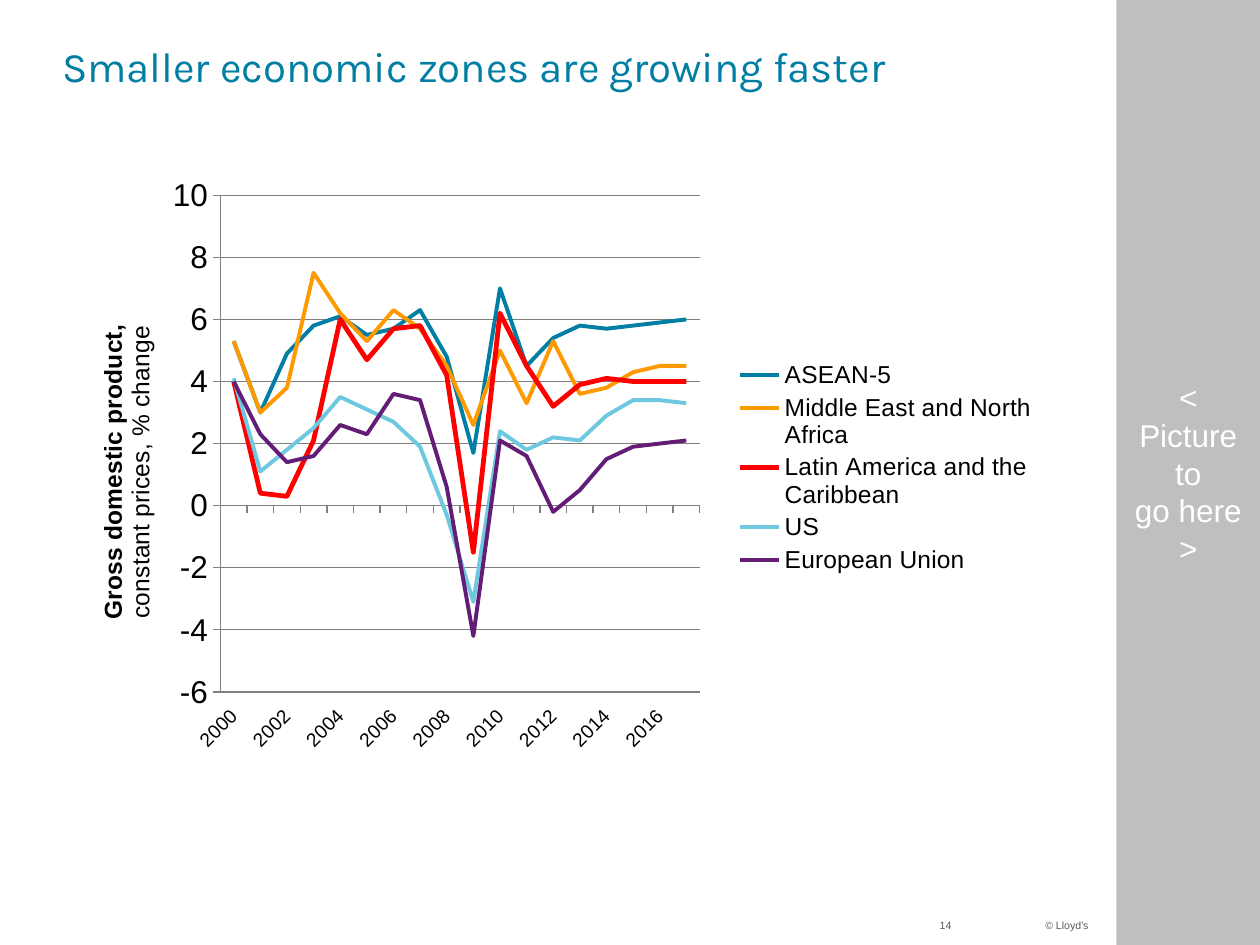
from lxml import etree
from pptx import Presentation
from pptx.chart.data import CategoryChartData
from pptx.dml.color import RGBColor
from pptx.enum.chart import XL_CHART_TYPE as ChartType, XL_LEGEND_POSITION as LegendPos
from pptx.enum.chart import XL_TICK_LABEL_POSITION as LabelPos, XL_TICK_MARK as TickMark
from pptx.enum.shapes import MSO_SHAPE as Preset
from pptx.enum.text import MSO_ANCHOR as Anchor, PP_ALIGN as Align
from pptx.oxml.ns import qn
from pptx.util import Pt

COLORS = {
    "title": "007EA3", "white": "FFFFFF", "sidebar": "BFBFBF", "footer": "595959",
    "text": "000000", "grid": "808080", "asean": "007EA3", "mena": "FF9900",
    "latin": "FF0000", "us": "6EC9E0", "eu": "631D76",
}
YEARS = [str(year) for year in range(2000, 2018)]
# name, colour, line width, growth per year
ZONES = [
    ("ASEAN-5", "asean", 2.25,
     [5.3, 3, 4.9, 5.8, 6.1, 5.5, 5.7, 6.3, 4.8, 1.7, 7, 4.5, 5.4, 5.8, 5.7, 5.8, 5.9, 6]),
    ("Middle East and North Africa", "mena", 2.25,
     [5.3, 3, 3.8, 7.5, 6.2, 5.3, 6.3, 5.7, 4.5, 2.6, 5, 3.3, 5.3, 3.6, 3.8, 4.3, 4.5, 4.5]),
    ("Latin America and the Caribbean", "latin", 2.75,
     [4, 0.4, 0.3, 2.1, 6, 4.7, 5.7, 5.8, 4.2, -1.5, 6.2, 4.5, 3.2, 3.9, 4.1, 4, 4, 4]),
    ("US", "us", 2.25,
     [4.1, 1.1, 1.8, 2.5, 3.5, 3.1, 2.7, 1.9, -0.3, -3.1, 2.4, 1.8, 2.2, 2.1, 2.9, 3.4, 3.4, 3.3]),
    ("European Union", "eu", 2.25,
     [4, 2.3, 1.4, 1.6, 2.6, 2.3, 3.6, 3.4, 0.6, -4.2, 2.1, 1.6, -0.2, 0.5, 1.5, 1.9, 2, 2.1]),
]


def rgb(key):
    return RGBColor.from_string(COLORS[key])


def style(font, size, color, face="Arial", bold=False):
    font.size, font.name, font.bold = Pt(size), face, bold
    font.color.rgb = rgb(color)


def add_run(paragraph, text, *args, **kwargs):
    run = paragraph.add_run()
    run.text = text
    style(run.font, *args, **kwargs)


def set_margins(frame, top=0):
    frame.margin_left = frame.margin_right = frame.margin_bottom = 0
    frame.margin_top = Pt(top)


def place_title(slide, left, top, width, height):
    title = slide.shapes.title
    title.left, title.top, title.width, title.height = map(Pt, (left, top, width, height))
    title.fill.solid()
    title.fill.fore_color.rgb = rgb("white")
    frame = title.text_frame
    set_margins(frame, top=3)
    frame.vertical_anchor = Anchor.TOP
    heading = frame.paragraphs[0]
    heading.alignment = Align.LEFT
    heading.line_spacing = 0.8
    add_run(heading, "Smaller economic zones are growing faster", 24, "title", face="Karla")


def add_sidebar(slide, left, top, width, height):
    sidebar = slide.shapes.add_shape(Preset.RECTANGLE, *map(Pt, (left, top, width, height)))
    sidebar.shadow.inherit = False
    sidebar.fill.solid()
    sidebar.fill.fore_color.rgb = rgb("sidebar")
    sidebar.line.fill.background()
    frame = sidebar.text_frame
    frame.word_wrap = True
    frame.vertical_anchor = Anchor.MIDDLE
    prompt = frame.paragraphs[0]
    prompt.alignment = Align.CENTER
    add_run(prompt, "< Picture to", 18, "white")
    prompt.add_line_break()
    add_run(prompt, "go here >", 18, "white")


def add_footer_text(slide, text, align, left, top, width, height):
    frame = slide.shapes.add_textbox(*map(Pt, (left, top, width, height))).text_frame
    frame.word_wrap = True
    set_margins(frame)
    frame.paragraphs[0].alignment = align
    add_run(frame.paragraphs[0], text, 6, "footer")


def set_layout(parent, index, inner=False, **fractions):
    """Fix a chart part's place as fractions of the chart's size."""
    for old in parent.findall(qn("c:layout")):
        parent.remove(old)
    layout = etree.Element(qn("c:layout"))
    manual = etree.SubElement(layout, qn("c:manualLayout"))
    if inner:
        etree.SubElement(manual, qn("c:layoutTarget"), val="inner")
    for mode in ("xMode", "yMode"):
        etree.SubElement(manual, qn(f"c:{mode}"), val="edge")
    for key, fraction in fractions.items():
        etree.SubElement(manual, qn(f"c:{key}"), val=str(fraction))
    parent.insert(index, layout)


def format_year_axis(axis):
    axis.tick_label_position = LabelPos.LOW
    axis.major_tick_mark = TickMark.OUTSIDE
    axis.format.line.color.rgb = rgb("grid")
    style(axis.tick_labels.font, 11, "text")
    body = axis._element.find(qn("c:txPr")).find(qn("a:bodyPr"))
    body.set("rot", "-2700000")
    body.set("vert", "horz")
    skip = etree.Element(qn("c:tickLblSkip"), val="2")
    axis._element.find(qn("c:lblOffset")).addnext(skip)


def format_growth_axis(axis):
    axis.minimum_scale, axis.maximum_scale, axis.major_unit = -6, 10, 2
    axis.major_tick_mark = TickMark.OUTSIDE
    axis.format.line.color.rgb = rgb("grid")
    axis.major_gridlines.format.line.color.rgb = rgb("grid")
    style(axis.tick_labels.font, 18, "text")
    axis.tick_labels.number_format = "General"
    axis.tick_labels.number_format_is_linked = False
    frame = axis.axis_title.text_frame
    add_run(frame.paragraphs[0], "Gross domestic product,", 14, "text", bold=True)
    add_run(frame.add_paragraph(), "constant prices, % change", 14, "text")
    set_layout(axis.axis_title._element, 1, x=0.03, y=0.26)


def add_growth_chart(slide, left, top, width, height):
    data = CategoryChartData()
    data.categories = YEARS
    for name, _, _, growth in ZONES:
        data.add_series(name, growth)
    chart = slide.shapes.add_chart(
        ChartType.LINE, *map(Pt, (left, top, width, height)), data).chart
    chart.has_title = False
    style(chart.font, 18, "text")
    chart.plots[0].vary_by_categories = False
    for series, (_, color, weight, _) in zip(chart.plots[0].series, ZONES):
        series.smooth = False
        series.format.line.color.rgb = rgb(color)
        series.format.line.width = Pt(weight)
    format_year_axis(chart.category_axis)
    format_growth_axis(chart.value_axis)
    chart.has_legend = True
    chart.legend.position = LegendPos.RIGHT
    chart.legend.include_in_layout = False
    style(chart.legend.font, 14, "text")
    set_layout(chart.legend._element, 1, x=0.68, y=0.32, w=0.32, h=0.37)
    plot_area = chart._chartSpace.find(qn("c:chart")).find(qn("c:plotArea"))
    set_layout(plot_area, 0, inner=True, x=0.16, y=0.05, w=0.49, h=0.83)


def main():
    deck = Presentation()
    deck.slide_width, deck.slide_height = Pt(720), Pt(540)
    slide = deck.slides.add_slide(deck.slide_layouts[5])
    add_footer_text(slide, "© Lloyd’s", Align.RIGHT, 538.5, 525, 83.5, 9.5)
    add_sidebar(slide, 638, 0, 82, 540)
    place_title(slide, 35.5, 26, 588, 39.5)
    add_footer_text(slide, "14", Align.LEFT, 537, 525, 28, 14.5)
    add_growth_chart(slide, 36.5, 94.5, 559, 342)
    deck.save("out.pptx")


if __name__ == "__main__":
    main()
